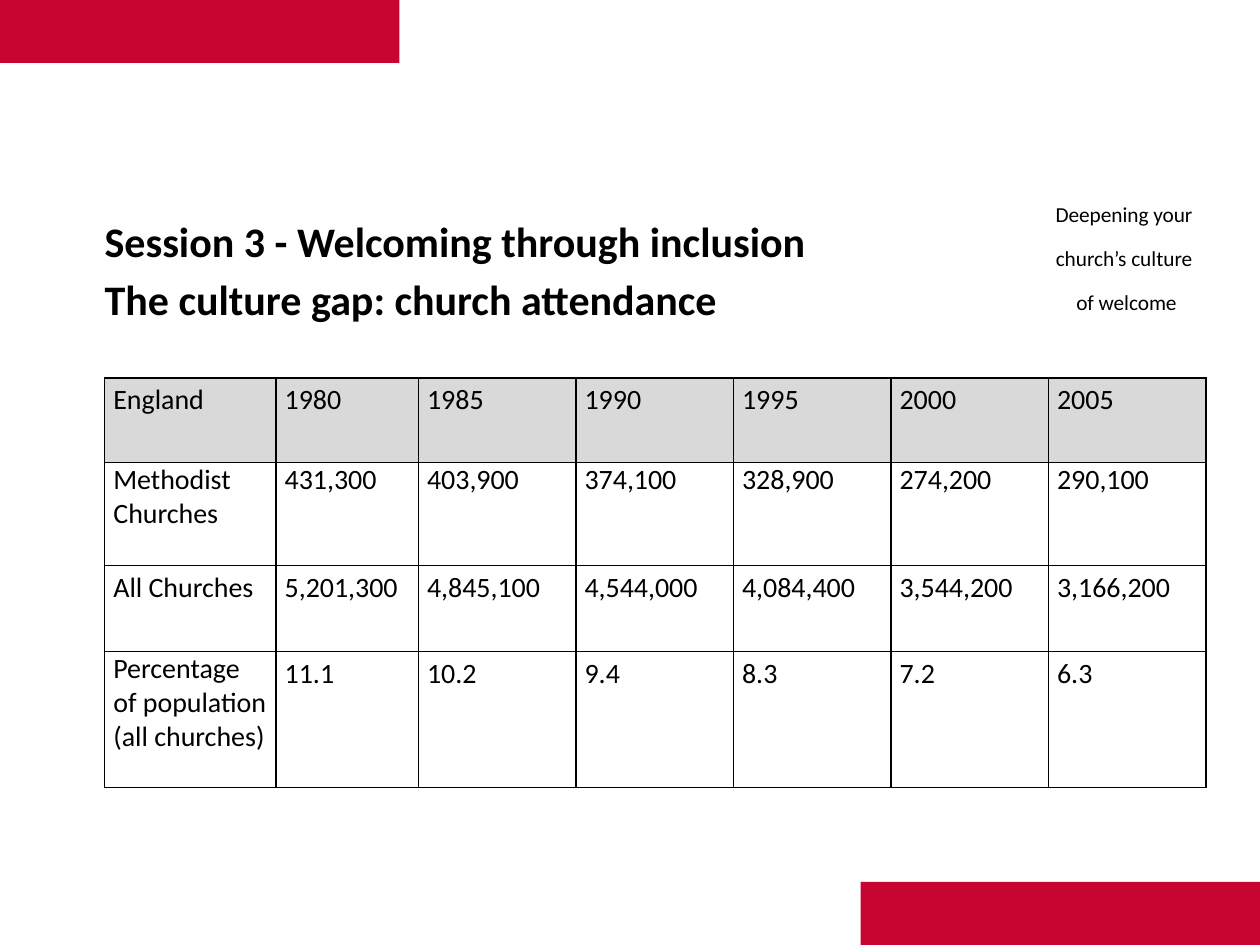
from dataclasses import dataclass

from lxml import etree
from pptx import Presentation
from pptx.dml.color import RGBColor
from pptx.enum.shapes import MSO_SHAPE
from pptx.enum.text import MSO_ANCHOR, PP_ALIGN
from pptx.oxml.ns import qn
from pptx.util import Inches, Pt

RECTANGLE = MSO_SHAPE.RECTANGLE
MIDDLE = MSO_ANCHOR.MIDDLE
CENTER = PP_ALIGN.CENTER

RED = RGBColor(0xC6, 0x06, 0x30)
BLACK = RGBColor(0x00, 0x00, 0x00)
HEADER_GREY = RGBColor(0xD9, 0xD9, 0xD9)
FONT = "Calibri"

COLUMN_WIDTHS = [1.36, 1.13] + [1.25] * 5
LOOSE = 1.15
SINGLE = 1.0


@dataclass
class Band:
    left: float
    top: float


@dataclass
class TableRow:
    height: float
    label: str
    values: list[str]
    label_spacing: float = LOOSE
    value_spacing: float = LOOSE


BANDS = [Band(0, 0), Band(6.83, 7)]
ROWS = [
    TableRow(0.67, "England", ["1980", "1985", "1990", "1995", "2000", "2005"]),
    TableRow(0.82, "Methodist Churches",
             ["431,300", "403,900", "374,100", "328,900", "274,200", "290,100"],
             SINGLE, SINGLE),
    TableRow(0.68, "All Churches",
             ["5,201,300", "4,845,100", "4,544,000", "4,084,400", "3,544,200", "3,166,200"]),
    TableRow(1.08, "Percentage \nof population\n(all churches)",
             ["11.1", "10.2", "9.4", "8.3", "7.2", "6.3"], SINGLE),
]


def add_run(paragraph, text: str, size: float, bold: bool = False):
    run = paragraph.add_run()
    run.text = text
    run.font.name = FONT
    run.font.size = Pt(size)
    run.font.bold = bold
    run.font.color.rgb = BLACK
    return run


def add_band(slide, band: Band) -> None:
    shape = slide.shapes.add_shape(
        RECTANGLE, Inches(band.left), Inches(band.top), Inches(3.17), Inches(0.5))
    shape.shadow.inherit = False
    shape.fill.solid()
    shape.fill.fore_color.rgb = RED
    shape.line.fill.background()


def add_borders(cell) -> None:
    properties = cell._tc.get_or_add_tcPr()
    for position, side in enumerate(("a:lnL", "a:lnR", "a:lnT", "a:lnB")):
        line = etree.Element(qn(side), w=str(Pt(1)))
        fill = etree.SubElement(line, qn("a:solidFill"))
        etree.SubElement(fill, qn("a:srgbClr"), val=str(BLACK))
        properties.insert(position, line)


def fill_cell(cell, text: str, spacing: float, is_header: bool) -> None:
    cell.margin_left = cell.margin_right = cell.margin_top = cell.margin_bottom = 0
    if is_header:
        cell.fill.solid()
        cell.fill.fore_color.rgb = HEADER_GREY
    else:
        cell.fill.background()
    add_borders(cell)
    paragraph = cell.text_frame.paragraphs[0]
    paragraph.line_spacing = spacing
    paragraph.space_after = Pt(6)
    paragraph._p.get_or_add_pPr().set("marL", str(Inches(0.07)))
    for index, line in enumerate(text.split("\n")):
        if index:
            paragraph.add_line_break()
        add_run(paragraph, line, 16)


def add_attendance_table(slide) -> None:
    table = slide.shapes.add_table(
        len(ROWS), len(COLUMN_WIDTHS), Inches(0.83), Inches(3),
        Inches(sum(COLUMN_WIDTHS)), Inches(sum(row.height for row in ROWS))).table
    table.horz_banding = False
    for column, width in zip(table.columns, COLUMN_WIDTHS):
        column.width = Inches(width)
    for row_index, row in enumerate(ROWS):
        table.rows[row_index].height = Inches(row.height)
        for column_index, text in enumerate([row.label] + row.values):
            spacing = row.value_spacing if column_index else row.label_spacing
            fill_cell(table.cell(row_index, column_index), text, spacing, row_index == 0)


def add_title(slide) -> None:
    box = slide.shapes.add_textbox(Inches(0.83), Inches(1.71), Inches(5.92), Inches(0.98))
    frame = box.text_frame
    frame.word_wrap = True
    frame.margin_left = frame.margin_top = frame.margin_bottom = 0
    frame.margin_right = Inches(0.04)
    session = frame.paragraphs[0]
    session.space_after = Pt(12)
    add_run(session, "Session 3 - Welcoming through inclusion", 24, bold=True)
    topic = frame.add_paragraph()
    topic.line_spacing = 0.7
    topic.space_after = Pt(18)
    add_run(topic, "The culture gap: church attendance", 24, bold=True)


def add_course_name(slide) -> None:
    box = slide.shapes.add_textbox(Inches(8.1), Inches(1.68), Inches(1.68), Inches(0.81))
    frame = box.text_frame
    frame.word_wrap = True
    frame.vertical_anchor = MIDDLE
    for index, line in enumerate(("Deepening your ", "church’s culture ", "of welcome")):
        paragraph = frame.add_paragraph() if index else frame.paragraphs[0]
        paragraph.alignment = CENTER
        run = add_run(paragraph, line, 21)
        run.font._element.set("baseline", "30000")  # raised text


def main() -> None:
    presentation = Presentation()
    presentation.slide_width = Inches(10)
    presentation.slide_height = Inches(7.5)
    slide = presentation.slides.add_slide(presentation.slide_layouts[6])

    # Corner bands
    for band in BANDS:
        add_band(slide, band)

    # Attendance figures
    add_attendance_table(slide)

    # Headings
    add_title(slide)
    add_course_name(slide)

    presentation.save("out.pptx")


if __name__ == "__main__":
    main()
